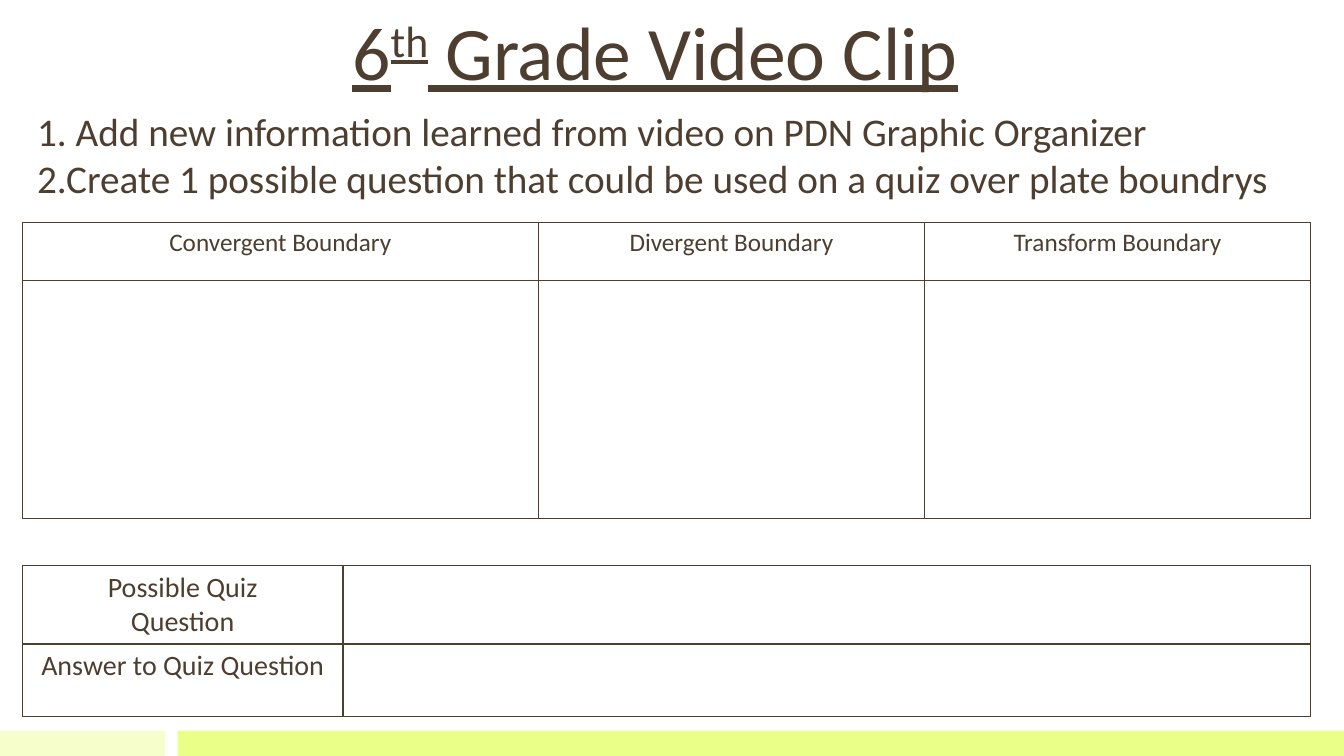
from lxml import etree
from pptx import Presentation
from pptx.dml.color import RGBColor
from pptx.enum import shapes, text
from pptx.oxml import ns
from pptx.util import Pt

HUES = {"ink": "4D3E2F", "pale": "F6FFCC", "lime": "E9FF88"}
FACE = "Calibri"


class Page:
    def __init__(self, deck):
        self.slide = deck.slides.add_slide(deck.slide_layouts[6])

    def paint(self, fill, hue):
        fill.solid()
        fill.fore_color.rgb = RGBColor.from_string(HUES[hue])

    def style(self, font, size, **extra):
        for key, val in {"name": FACE, "size": Pt(size), **extra}.items():
            setattr(font, key, val)
        self.paint(font.fill, "ink")

    def fill_in(self, frame, lines, size, align=text.PP_ALIGN.LEFT, **extra):
        """Each line is a list of (words, baseline percent) runs."""
        for i, runs in enumerate(lines):
            para = frame.add_paragraph() if i else frame.paragraphs[0]
            para.alignment = align
            for words, rise in runs:
                run = para.add_run()
                run.text = words
                self.style(run.font, size, **extra)
                if rise:
                    run._r.get_or_add_rPr().set("baseline", str(rise * 1000))

    def bar(self, left, top, width, height, hue):
        box = self.slide.shapes.add_shape(
            shapes.MSO_SHAPE.RECTANGLE, *map(Pt, (left, top, width, height)))
        box.shadow.inherit = False
        self.paint(box.fill, hue)
        box.line.fill.background()

    def label(self, area, lines, size, wrap=True, **extra):
        box = self.slide.shapes.add_textbox(*map(Pt, area))
        frame = box.text_frame
        frame.word_wrap = wrap
        frame.auto_size = text.MSO_AUTO_SIZE.SHAPE_TO_FIT_TEXT
        self.fill_in(frame, lines, size, **extra)

    def edge(self, cell):
        props = cell._tc.get_or_add_tcPr()
        for i, side in enumerate("LRTB"):
            line = etree.Element(ns.qn(f"a:ln{side}"), w=str(int(Pt(1))))
            fill = etree.SubElement(line, ns.qn("a:solidFill"))
            etree.SubElement(fill, ns.qn("a:srgbClr"), val=HUES["ink"])
            props.insert(i, line)

    def grid(self, left, top, cols, rows, cells, size):
        table = self.slide.shapes.add_table(
            len(rows), len(cols),
            *map(Pt, (left, top, sum(cols), sum(rows)))).table
        table.first_row = table.horz_banding = False
        for col, width in zip(table.columns, cols):
            col.width = Pt(width)
        for row, height, texts in zip(table.rows, rows, cells):
            row.height = Pt(height)
            for cell, words in zip(row.cells, texts):
                cell.fill.background()
                self.edge(cell)
                if words:
                    lines = [[(part, 0)] for part in words.split("\n")]
                    self.fill_in(cell.text_frame, lines, size,
                                 text.PP_ALIGN.CENTER)


def main():
    deck = Presentation()
    deck.slide_width, deck.slide_height = Pt(960), Pt(540)
    page = Page(deck)

    # Footer bars
    page.bar(0, 522, 118, 18, "pale")
    page.bar(127, 522, 833, 18, "lime")

    # Title and tasks
    page.label((240.5, 0, 455, 72.7),
               [[("6", 0), ("th", 30), (" Grade Video Clip", 0)]], 54,
               wrap=False, align=text.PP_ALIGN.CENTER, underline=True)
    tasks = (
        "1. Add new information learned from video on PDN Graphic Organizer",
        "2.Create 1 possible question that could be used on a quiz "
        "over plate boundrys",
    )
    page.label((19.5, 73, 920, 97), [[(task, 0)] for task in tasks], 28)

    # Boundary table
    kinds = ("Convergent", "Divergent", "Transform")
    page.grid(16, 159, (368.6, 275.8, 275.8), (41.5, 170),
              ([f"{kind} Boundary" for kind in kinds], [""] * 3), 18)

    # Quiz table
    page.grid(16, 404, (229, 691.2), (56, 52),
              (("Possible Quiz\nQuestion", ""),
               ("Answer to Quiz Question", "")), 20)

    deck.save("out.pptx")


if __name__ == "__main__":
    main()
